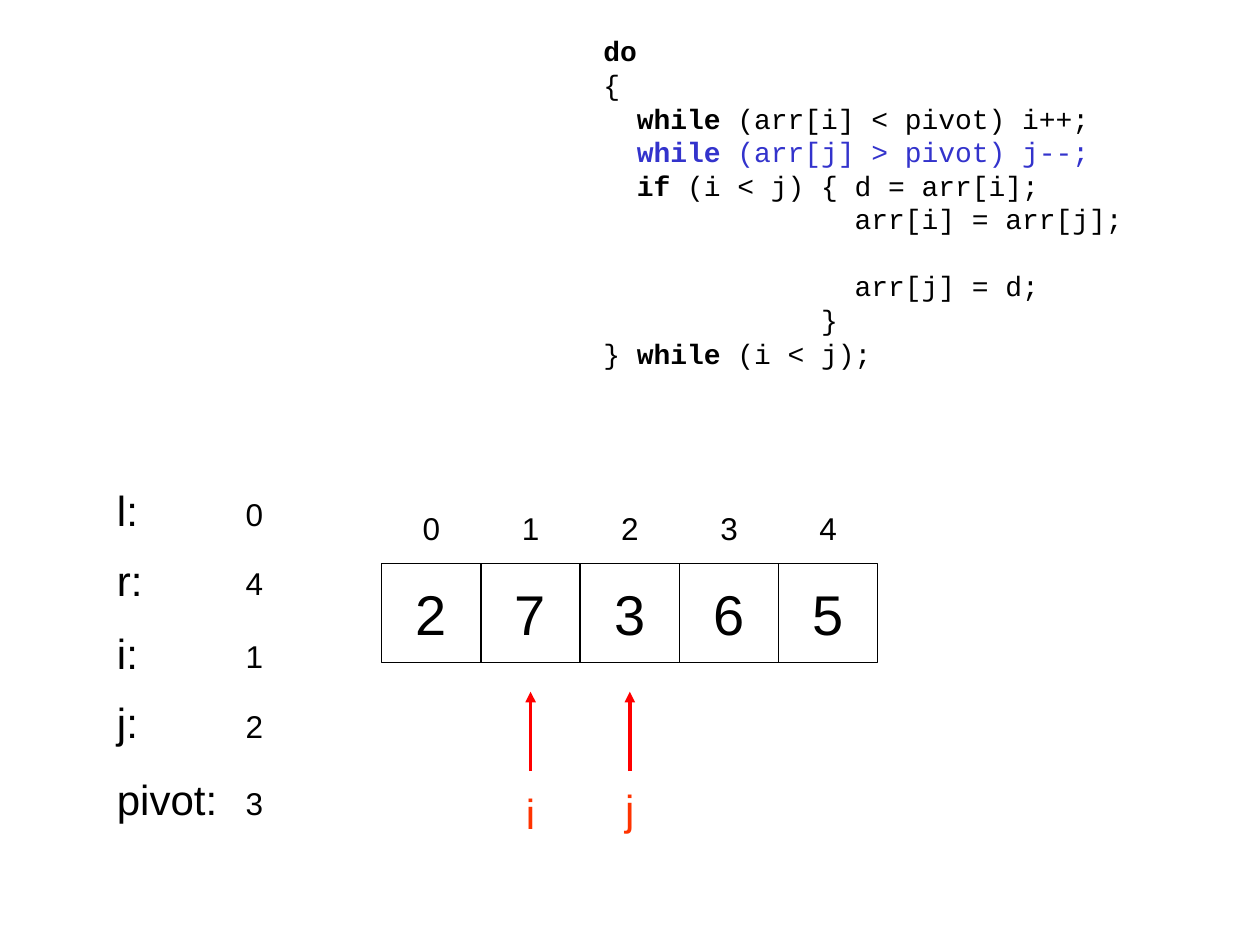
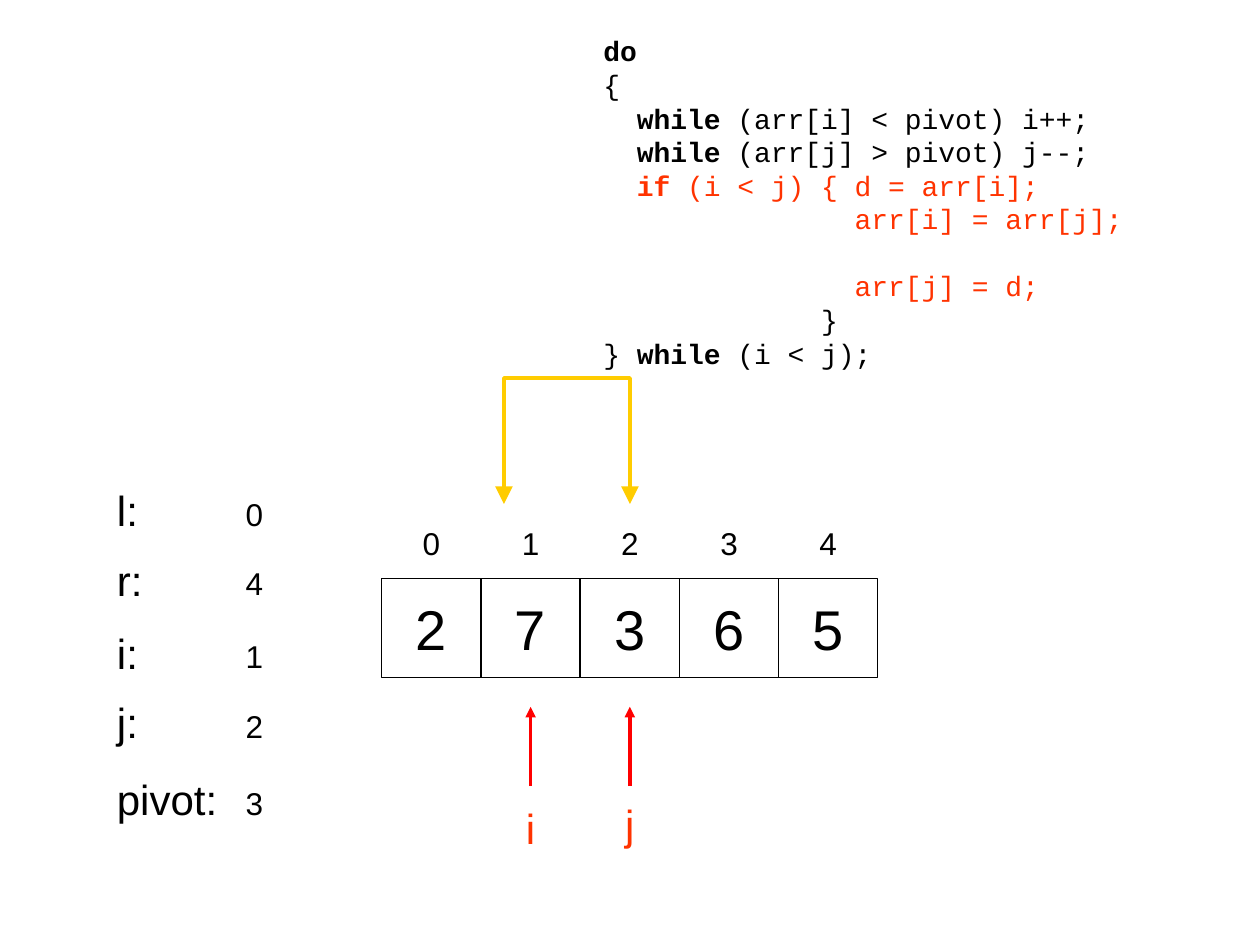
from lxml import etree
from pptx import Presentation
from pptx import util as u
from pptx.dml.color import RGBColor
from pptx.enum import shapes, text
from pptx.oxml import ns

COLORS = {"ink": "000000", "arrow": "FF0000", "red": "FF3300", "blue": "3333CC", "swap": "FFCC00"}
BODY_FONT, CODE_FONT = "Arial", "Courier New"
LINE_HEIGHT = 1.2  # times the text size

# Each line of code: plain start, bold keyword, plain rest
CODE = [
    ("", "do", ""),
    ("{", "", ""),
    ("  ", "while", " (arr[i] < pivot) i++;"),
    ("  ", "while", " (arr[j] > pivot) j--;"),
    ("  ", "if", " (i < j) { d = arr[i];"),
    ("               arr[i] = arr[j];", "", ""),
    ("               arr[j] = d;", "", ""),
    ("             }", "", ""),
    ("} ", "while", " (i < j);"),
]
GAP_AFTER_LINE = 5
ARRAY = [2, 7, 3, 6, 5]
# Name, value, top of the name
VARIABLES = [("l:", 0, 3.8), ("r:", 4, 4.35), ("i:", 1, 4.93), ("j:", 2, 5.48), ("pivot:", 3, 6.09)]
# Name, array position, distance of the label below the array's top
POINTERS = [("i", 1, 1.73), ("j", 2, 1.7)]
STEPS = [
    {"array_top": 4.47, "active": {3}, "color": "blue", "swap": False},
    {"array_top": 4.59, "active": {4, 5, 6}, "color": "red", "swap": True},
]
ARRAY_LEFT, CELL = 3.03, 0.7875
SWAP_CURVES = [
    [(4.13, 3.81), (4.19, 3.57), (4.37, 3.41), (4.57, 3.41)],
    [(4.57, 3.41), (4.77, 3.41), (4.94, 3.56), (5, 3.79)],
]


def rgb(name):
    return RGBColor.from_string(COLORS[name])


def add_run(paragraph, words, size, color="ink", font=BODY_FONT, bold=False):
    run = paragraph.add_run()
    run.text = words
    run.font.size, run.font.name, run.font.bold = u.Pt(size), font, bold
    run.font.color.rgb = rgb(color)
    paragraph.line_spacing = u.Pt(size * LINE_HEIGHT)


def add_text_box(slide, left, top, width, height):
    box = slide.shapes.add_textbox(*map(u.Inches, (left, top, width, height)))
    box.text_frame.word_wrap = True
    return box.text_frame


def add_label(slide, words, place, size, color="ink", centered=False):
    paragraph = add_text_box(slide, *place).paragraphs[0]
    if centered:
        paragraph.alignment = text.PP_ALIGN.CENTER
    add_run(paragraph, str(words), size, color)


def add_arrowheads(shape, ends, size):
    line = shape.line._get_or_add_ln()
    for end in ends:
        etree.SubElement(line, ns.qn(f"a:{end}"), type="triangle", w=size, len=size)


def add_code(slide, active, color):
    frame = add_text_box(slide, 4.69, 0.22, 5, 2.51)
    for number, parts in enumerate(CODE):
        paragraph = frame.add_paragraph() if number else frame.paragraphs[0]
        for part, bold in zip(parts, (False, True, False)):
            if part:
                add_run(paragraph, part, 16, color if number in active else "ink", CODE_FONT, bold)
        if number == GAP_AFTER_LINE:
            paragraph.space_after = u.Pt(16 * LINE_HEIGHT)


def add_array(slide, top):
    for index, value in enumerate(ARRAY):
        left = ARRAY_LEFT + index * CELL
        cell = slide.shapes.add_shape(
            shapes.MSO_SHAPE.RECTANGLE, *map(u.Inches, (left, top, CELL, CELL)))
        cell.shadow.inherit = False
        cell.fill.background()
        cell.line.color.rgb, cell.line.width = rgb("ink"), u.Pt(0.75)
        frame = cell.text_frame
        frame.word_wrap = False
        frame.vertical_anchor = text.MSO_ANCHOR.MIDDLE
        frame.paragraphs[0].alignment = text.PP_ALIGN.CENTER
        add_run(frame.paragraphs[0], str(value), 32)
        add_label(slide, index, (left, top - 0.48, CELL, 0.39), 18, centered=True)


def add_pointers(slide, array_top):
    for name, index, drop in POINTERS:
        center = ARRAY_LEFT + (index + 0.5) * CELL
        arrow = slide.shapes.add_connector(
            shapes.MSO_CONNECTOR.STRAIGHT,
            *map(u.Inches, (center, array_top + 1.65, center, array_top + 1.02)))
        arrow.line.color.rgb, arrow.line.width = rgb("arrow"), u.Pt(2)
        add_arrowheads(arrow, ["tailEnd"], "med")
        etree.SubElement(arrow._element.spPr, ns.qn("a:effectLst"))
        add_label(slide, name, (center - 0.235, array_top + drop, 0.47, 0.5), 24, "red", True)


def add_variables(slide):
    for name, value, top in VARIABLES:
        add_label(slide, name, (0.83, top, 1.1, 0.5), 24)
        add_label(slide, value, (1.85, top + 0.08, 0.39, 0.4), 18)


def bezier(points, t):
    weights = ((1 - t) ** 3, 3 * t * (1 - t) ** 2, 3 * t * t * (1 - t), t ** 3)
    return tuple(sum(w * p[axis] for w, p in zip(weights, points)) for axis in (0, 1))


def add_swap_arrow(slide, steps=16):
    builder = slide.shapes.build_freeform(*SWAP_CURVES[0][0], scale=u.Inches(1))
    builder.add_line_segments(
        [bezier(curve, step / steps) for curve in SWAP_CURVES for step in range(1, steps + 1)],
        close=False)
    arc = builder.convert_to_shape()
    arc.shadow.inherit = False
    arc.fill.background()
    arc.line.color.rgb, arc.line.width = rgb("swap"), u.Pt(2)
    add_arrowheads(arc, ["headEnd", "tailEnd"], "lg")


def main():
    presentation = Presentation()
    presentation.slide_width, presentation.slide_height = u.Inches(10), u.Inches(7.5)
    for step in STEPS:
        slide = presentation.slides.add_slide(presentation.slide_layouts[6])
        add_array(slide, step["array_top"])
        add_pointers(slide, step["array_top"])
        add_variables(slide)
        if step["swap"]:
            add_swap_arrow(slide)
        add_code(slide, step["active"], step["color"])
    presentation.save("out.pptx")


if __name__ == "__main__":
    main()
